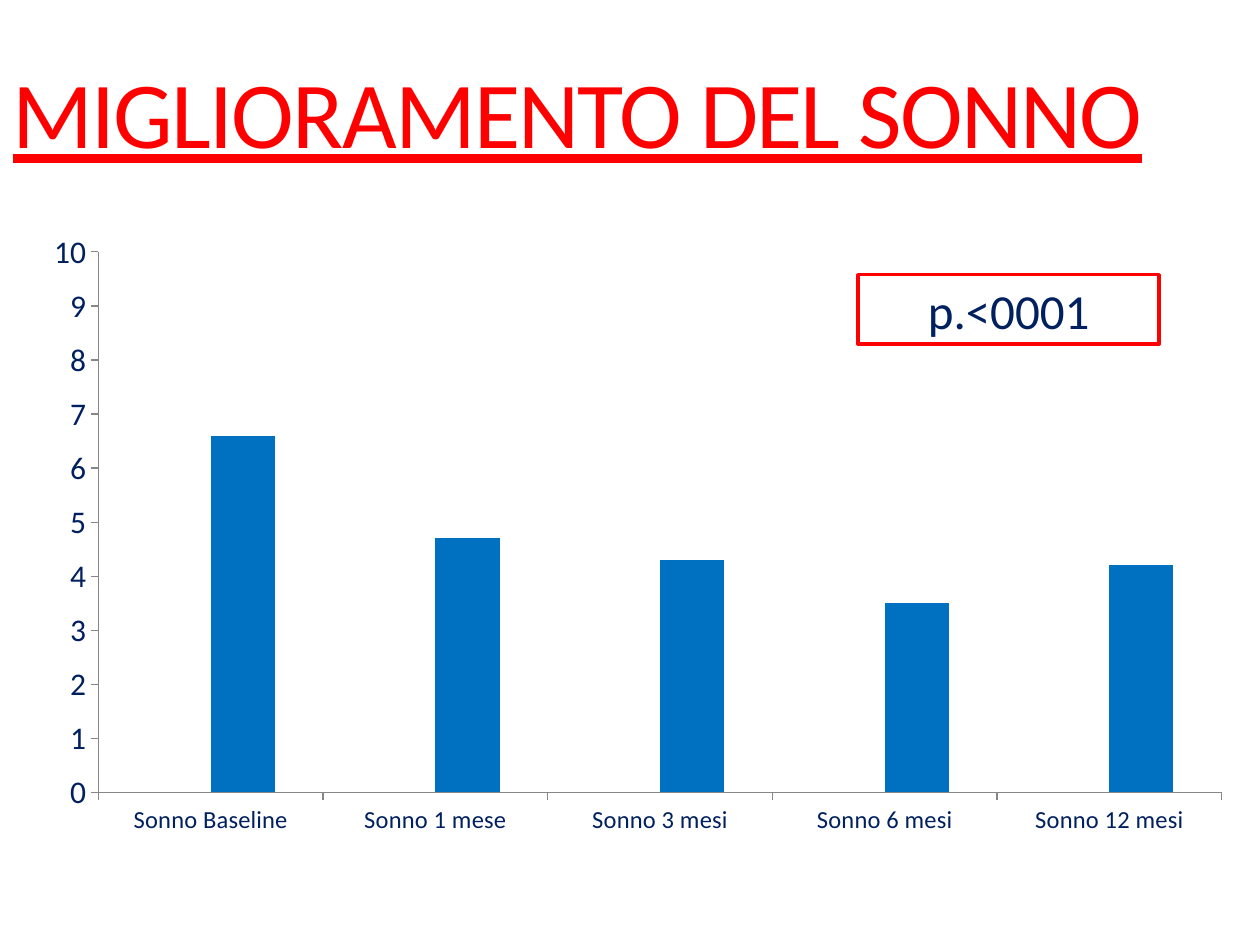
from dataclasses import dataclass

from lxml.etree import SubElement
from pptx import Presentation
from pptx.chart.data import CategoryChartData
from pptx.dml.color import RGBColor
from pptx.enum.chart import XL_CHART_TYPE, XL_TICK_MARK
from pptx.enum.shapes import MSO_SHAPE
from pptx.enum.text import MSO_ANCHOR, PP_ALIGN
from pptx.oxml.ns import qn
from pptx.util import Inches, Pt

SLIDE_WIDTH, SLIDE_HEIGHT = Inches(10), Inches(7.5)
FONT = "Calibri"
COLORS = {
    "red": "FF0000",
    "navy": "002060",
    "blue": "0070C0",
    "pale_blue": "4F81BD",
    "white": "FFFFFF",
    "axis": "868686",
}


@dataclass
class Box:
    """Position and size as percentages of the slide."""
    left: float
    top: float
    width: float
    height: float

    def lengths(self) -> tuple:
        return (int(SLIDE_WIDTH * self.left / 100), int(SLIDE_HEIGHT * self.top / 100),
                int(SLIDE_WIDTH * self.width / 100), int(SLIDE_HEIGHT * self.height / 100))


@dataclass
class Series:
    name: str
    values: tuple
    color: str


TITLE_BOX = Box(0, 1.73, 98.8, 16.67)
CHART_BOX = Box(2, 23.33, 96.9, 66.53)
P_VALUE_BOX = Box(68.1, 29.07, 23.9, 7.33)
PLOT_SHARES = {"x": 0.06, "y": 0.05, "w": 0.92, "h": 0.86}

CATEGORIES = ("Sonno Baseline", "Sonno 1 mese", "Sonno 3 mesi", "Sonno 6 mesi", "Sonno 12 mesi")
SERIES = (
    Series("Series 1", (None,) * len(CATEGORIES), "pale_blue"),
    Series("Series 2", (6.6, 4.7, 4.3, 3.5, 4.2), "blue"),
)


def color(name: str) -> RGBColor:
    return RGBColor.from_string(COLORS[name])


def format_font(font, size: float, color_name: str) -> None:
    font.name = FONT
    font.size = Pt(size)
    font.color.rgb = color(color_name)


def add_title(slide, text: str) -> None:
    title = slide.shapes.title
    title.left, title.top, title.width, title.height = TITLE_BOX.lengths()
    title.text_frame.text = text
    title.text_frame.vertical_anchor = MSO_ANCHOR.BOTTOM
    paragraph = title.text_frame.paragraphs[0]
    paragraph.alignment = PP_ALIGN.LEFT
    run = paragraph.runs[0]
    format_font(run.font, 54, "red")
    run.font.underline = True
    run.font._element.set("spc", "-100")


def format_axis(axis, size: float) -> None:
    axis.has_major_gridlines = False
    axis.major_tick_mark = XL_TICK_MARK.OUTSIDE
    axis.minor_tick_mark = XL_TICK_MARK.NONE
    axis.format.line.color.rgb = color("axis")
    axis.format.line.width = Pt(0.75)
    format_font(axis.tick_labels.font, size, "navy")


def place_plot(chart) -> None:
    plot_area = chart._chartSpace.chart.plotArea
    for old_layout in plot_area.findall(qn("c:layout")):
        plot_area.remove(old_layout)
    layout = SubElement(plot_area, qn("c:layout"))
    plot_area.insert(0, layout)
    manual = SubElement(layout, qn("c:manualLayout"))
    settings = {"layoutTarget": "inner", "xMode": "edge", "yMode": "edge", **PLOT_SHARES}
    for name, value in settings.items():
        SubElement(manual, qn(f"c:{name}")).set("val", str(value))


def add_sleep_chart(slide) -> None:
    data = CategoryChartData()
    data.categories = CATEGORIES
    for series in SERIES:
        data.add_series(series.name, series.values)
    chart = slide.shapes.add_chart(
        XL_CHART_TYPE.COLUMN_CLUSTERED, *CHART_BOX.lengths(), data).chart
    chart.has_legend = False
    chart.has_title = False
    format_font(chart.font, 18, "navy")

    plot = chart.plots[0]
    plot.gap_width = 150
    plot.vary_by_categories = False
    for drawn, series in zip(plot.series, SERIES):
        drawn.format.fill.solid()
        drawn.format.fill.fore_color.rgb = color(series.color)

    format_axis(chart.category_axis, 14)
    format_axis(chart.value_axis, 18)
    chart.value_axis.minimum_scale = 0
    chart.value_axis.maximum_scale = 10
    chart.value_axis.major_unit = 1
    place_plot(chart)


def add_p_value(slide, text: str) -> None:
    shape = slide.shapes.add_shape(MSO_SHAPE.RECTANGLE, *P_VALUE_BOX.lengths())
    shape.shadow.inherit = False
    shape.fill.solid()
    shape.fill.fore_color.rgb = color("white")
    shape.line.color.rgb = color("red")
    shape.line.width = Pt(2)
    shape.text_frame.text = text
    shape.text_frame.vertical_anchor = MSO_ANCHOR.TOP
    paragraph = shape.text_frame.paragraphs[0]
    paragraph.alignment = PP_ALIGN.CENTER
    format_font(paragraph.runs[0].font, 28, "navy")


def main() -> None:
    presentation = Presentation()
    presentation.slide_width, presentation.slide_height = SLIDE_WIDTH, SLIDE_HEIGHT
    slide = presentation.slides.add_slide(presentation.slide_layouts[5])

    # Chart, heading and significance label
    add_sleep_chart(slide)
    add_title(slide, "MIGLIORAMENTO DEL SONNO")
    add_p_value(slide, "p.<0001")
    presentation.save("out.pptx")


if __name__ == "__main__":
    main()
